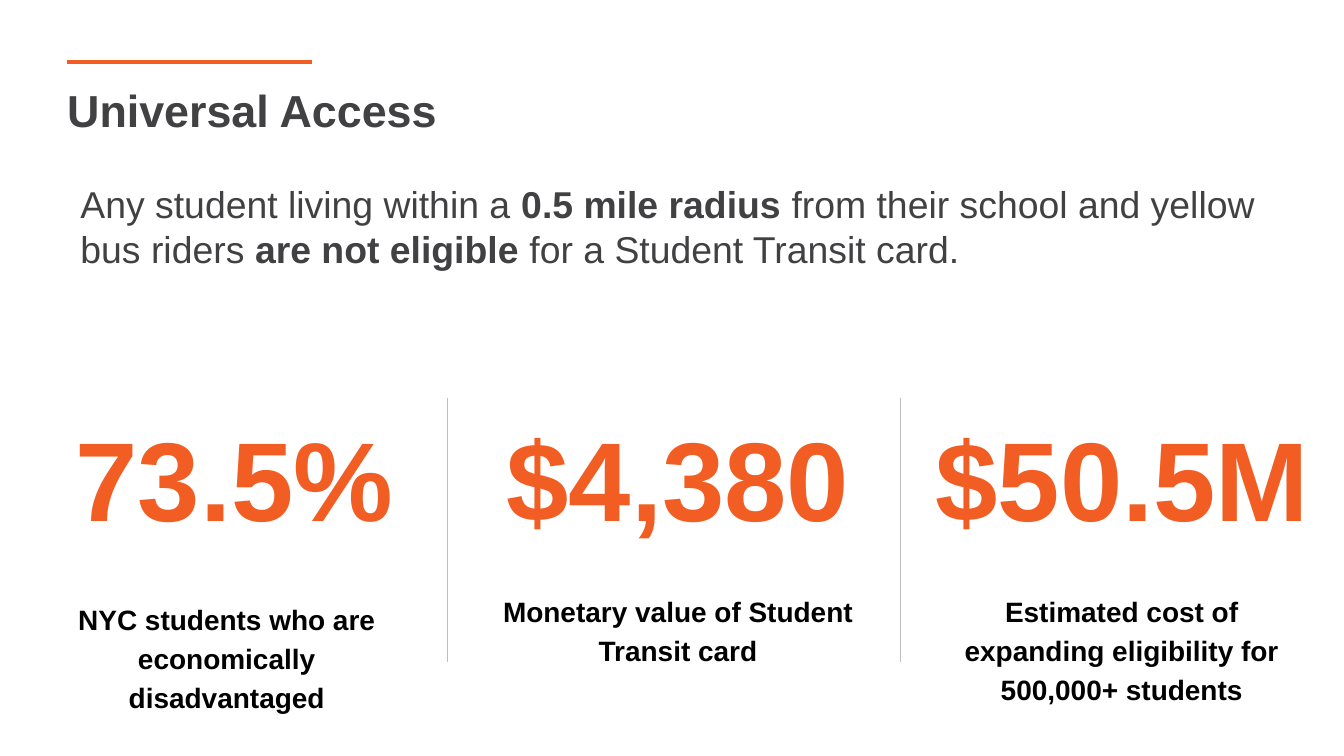
import pptx
import pptx.util
import pptx.dml.color
import pptx.enum.shapes
import pptx.enum.text
import pptx.oxml.xmlchemy
from dataclasses import dataclass

Cm = pptx.util.Cm
Pt = pptx.util.Pt
Align = pptx.enum.text.PP_ALIGN
Anchor = pptx.enum.text.MSO_ANCHOR


@dataclass(frozen=True)
class Theme:
    font: str = "Arial"
    accent: str = "F15D22"
    ink: str = "414042"
    label: str = "000000"
    divider: str = "BCBEC0"
    title_size: int = 24
    body_size: int = 20
    figure_size: int = 60
    label_size: int = 15


THEME = Theme()

STATEMENT = [
    ("Any student living within a ", False),
    ("0.5 mile radius ", True),
    ("from their school and yellow bus riders ", False),
    ("are not eligible ", True),
    ("for a Student Transit card.", False),
]

STATISTICS = [
    ("73.5%", (0.2, 8.46),
     "NYC students who are economically disadvantaged", (0.97, 11.3, 6.63, 1.37)),
    ("$4,380", (8.53, 8.56),
     "Monetary value of Student Transit card", (9.32, 11.15, 6.99, 1.37)),
    ("$50.5M", (17.17, 8.08),
     "Estimated cost of expanding eligibility for 500,000+ students",
     (17.81, 11.15, 6.78, 2.11)),
]


def format_span(span, size, color, bold):
    span.font.name = THEME.font
    span.font.size = Pt(size)
    span.font.bold = bold
    span.font.color.rgb = pptx.dml.color.RGBColor.from_string(color)


def set_frame(box, inset=0, top_inset=None, anchor=Anchor.TOP):
    frame = box.text_frame
    frame.word_wrap = True
    frame.auto_size = pptx.enum.text.MSO_AUTO_SIZE.NONE
    frame.vertical_anchor = anchor
    frame.margin_left = frame.margin_right = frame.margin_bottom = Cm(inset)
    frame.margin_top = Cm(inset if top_inset is None else top_inset)
    return frame


def place(box, left, top, width, height):
    box.left, box.top, box.width, box.height = map(Cm, (left, top, width, height))


def add_line(page, start, end, color, weight):
    line = page.shapes.add_connector(
        pptx.enum.shapes.MSO_CONNECTOR.STRAIGHT, *map(Cm, start + end))
    line.line.color.rgb = pptx.dml.color.RGBColor.from_string(color)
    line.line.width = Pt(weight)
    properties = line._element.spPr
    properties.append(pptx.oxml.xmlchemy.OxmlElement("a:effectLst"))


def fill_title(page, text):
    box = page.shapes.title
    place(box, 1.27, 1.47, 11.94, 1.22)
    frame = set_frame(box, anchor=Anchor.MIDDLE)
    frame.text = text
    para = frame.paragraphs[0]
    para.alignment = Align.LEFT
    format_span(para.runs[0], THEME.title_size, THEME.ink, True)


def fill_statement(page, parts):
    box = page.placeholders[1]
    place(box, 1.27, 3.15, 22.86, 2.24)
    para = set_frame(box, inset=0.25, anchor=Anchor.MIDDLE).paragraphs[0]
    properties = para._p.get_or_add_pPr()
    properties.set("marL", "0")
    properties.set("indent", "0")
    properties.append(pptx.oxml.xmlchemy.OxmlElement("a:buNone"))
    para.space_before = Pt(0)
    for text, bold in parts:
        span = para.add_run()
        span.text = text
        format_span(span, THEME.body_size, THEME.ink, bold)


def add_centered_text(page, text, bounds, size, color, spacing, top_inset=0):
    box = page.shapes.add_textbox(*map(Cm, bounds))
    frame = set_frame(box, top_inset=top_inset)
    frame.text = text
    para = frame.paragraphs[0]
    para.alignment = Align.CENTER
    para.line_spacing = spacing
    format_span(para.runs[0], size, color, True)


def add_statistic(page, figure, span, label, label_bounds):
    left, width = span
    add_centered_text(page, figure, (left, 7.47, width, 2.57),
                      THEME.figure_size, THEME.accent, 1.03, top_inset=0.2)
    add_centered_text(page, label, label_bounds,
                      THEME.label_size, THEME.label, 1.15)


def main():
    deck = pptx.Presentation()
    deck.slide_width, deck.slide_height = Cm(25.4), Cm(14.29)
    page = deck.slides.add_slide(deck.slide_layouts[1])
    add_line(page, (1.27, 1.17), (5.89, 1.17), THEME.accent, 2.25)
    fill_title(page, "Universal Access")
    fill_statement(page, STATEMENT)
    for statistic in STATISTICS:
        add_statistic(page, *statistic)
    for left in (8.46, 17.02):
        add_line(page, (left, 7.52), (left, 12.52), THEME.divider, 0.75)
    deck.save("out.pptx")


if __name__ == "__main__":
    main()
